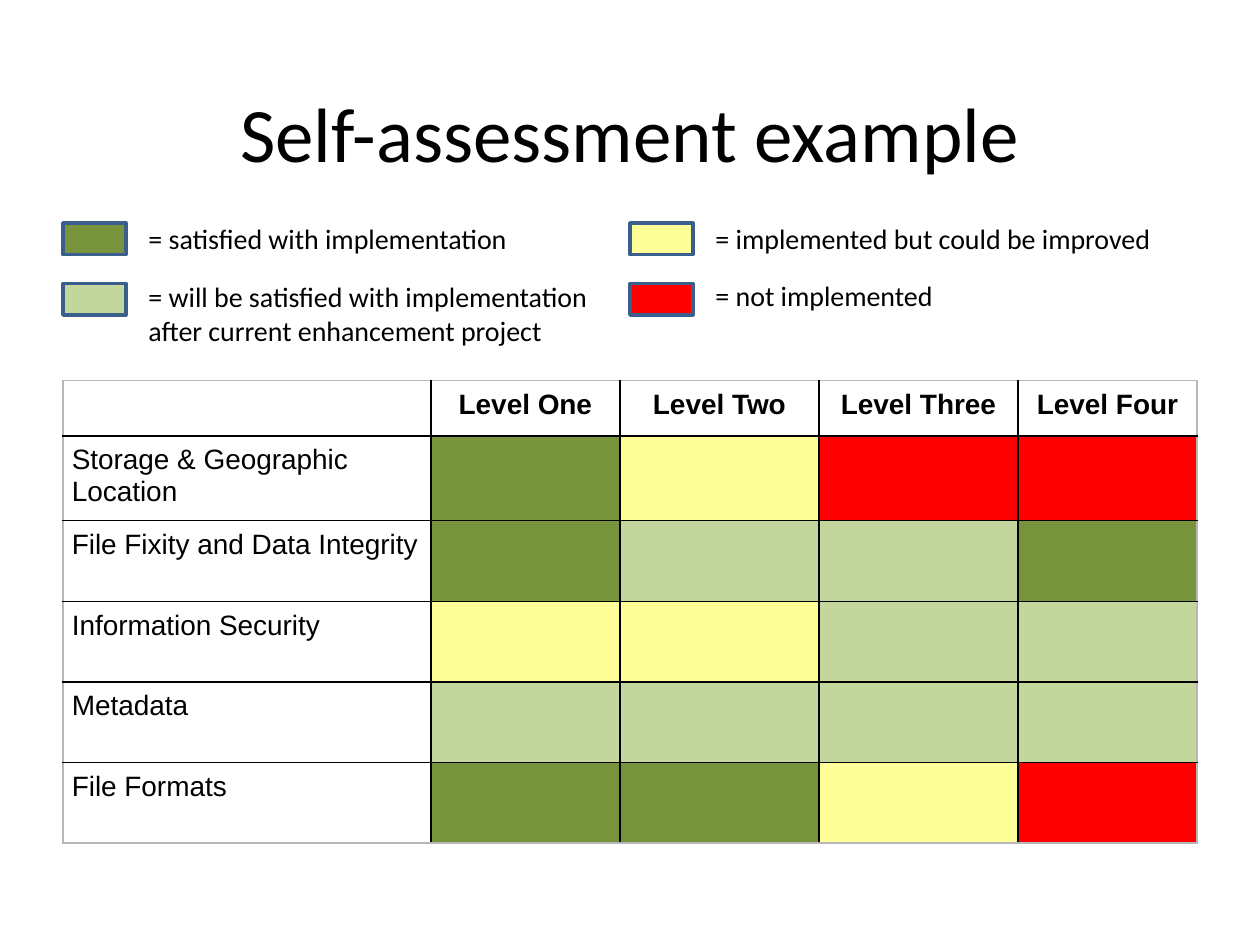
from lxml.etree import SubElement
from pptx import Presentation
from pptx.dml.color import RGBColor
from pptx.enum.shapes import MSO_SHAPE
from pptx.enum.text import MSO_ANCHOR, PP_ALIGN
from pptx.oxml.ns import qn
from pptx.util import Inches, Pt

BLACK = RGBColor(0x00, 0x00, 0x00)
GRAY = RGBColor(0xB7, 0xB7, 0xB7)
OUTLINE = RGBColor(0x3A, 0x5F, 0x8C)
SATISFIED = RGBColor(0x77, 0x93, 0x3C)
PLANNED = RGBColor(0xC3, 0xD6, 0x9B)
PARTIAL = RGBColor(0xFF, 0xFF, 0x99)
MISSING = RGBColor(0xFF, 0x00, 0x00)

LEVELS = ["Level One", "Level Two", "Level Three", "Level Four"]
ASSESSMENT = [
    ("Storage & Geographic Location", [SATISFIED, PARTIAL, MISSING, MISSING]),
    ("File Fixity and Data Integrity", [SATISFIED, PLANNED, PLANNED, SATISFIED]),
    ("Information Security", [PARTIAL, PARTIAL, PLANNED, PLANNED]),
    ("Metadata", [PLANNED, PLANNED, PLANNED, PLANNED]),
    ("File Formats", [SATISFIED, SATISFIED, PARTIAL, MISSING]),
]
COLUMN_WIDTHS = [2.92, 1.5, 1.58, 1.58, 1.42]
ROW_HEIGHTS = [0.41] + [0.64] * len(ASSESSMENT)

# left, swatch top, text top, text height, color, lines
LEGEND = [
    (0.5, 1.77, 1.71, 0.37, SATISFIED, ["= satisfied with implementation"]),
    (0.5, 2.25, 2.17, 0.64, PLANNED,
     ["= will be satisfied with implementation", "after current enhancement project"]),
    (5, 1.77, 1.71, 0.37, PARTIAL, ["= implemented but could be improved"]),
    (5, 2.25, 2.16, 0.37, MISSING, ["= not implemented"]),
]


def write_text(text_frame, lines, size, font, align=PP_ALIGN.LEFT, bold=False):
    text_frame.word_wrap = True
    for index, line in enumerate(lines):
        paragraph = text_frame.add_paragraph() if index else text_frame.paragraphs[0]
        paragraph.text = line
        paragraph.alignment = align
        paragraph.font.size = Pt(size)
        paragraph.font.name = font
        paragraph.font.bold = bold
        paragraph.font.color.rgb = BLACK


def set_border(cell, side, color, width):
    line = SubElement(cell._tc.get_or_add_tcPr(), qn(f"a:ln{side}"), w=str(Pt(width)))
    SubElement(SubElement(line, qn("a:solidFill")), qn("a:srgbClr"), val=str(color))


presentation = Presentation()
presentation.slide_width = Inches(10)
presentation.slide_height = Inches(7.5)
slide = presentation.slides.add_slide(presentation.slide_layouts[6])

title = slide.shapes.add_textbox(Inches(0.5), Inches(0.42), Inches(9), Inches(1.25))
title.text_frame.vertical_anchor = MSO_ANCHOR.MIDDLE
write_text(title.text_frame, ["Self-assessment example"], 44, "Calibri", PP_ALIGN.CENTER)

table = slide.shapes.add_table(
    len(ROW_HEIGHTS), len(COLUMN_WIDTHS), Inches(0.5), Inches(3.02),
    Inches(sum(COLUMN_WIDTHS)), Inches(sum(ROW_HEIGHTS))).table
table.first_row = False
table.horz_banding = False
for column, width in zip(table.columns, COLUMN_WIDTHS):
    column.width = Inches(width)
for row, height in zip(table.rows, ROW_HEIGHTS):
    row.height = Inches(height)

last_row, last_column = len(ROW_HEIGHTS) - 1, len(COLUMN_WIDTHS) - 1
for row_index in range(last_row + 1):
    for column_index in range(last_column + 1):
        cell = table.cell(row_index, column_index)
        cell.margin_left = cell.margin_right = Inches(0.07)
        cell.margin_top = cell.margin_bottom = Inches(0.07)
        outer_sides = {"L": column_index == 0, "R": column_index == last_column,
                       "T": row_index == 0, "B": row_index == last_row}
        for side, is_outer in outer_sides.items():
            set_border(cell, side, GRAY if is_outer else BLACK, 1)
        if row_index and column_index:
            cell.fill.solid()
            cell.fill.fore_color.rgb = ASSESSMENT[row_index - 1][1][column_index - 1]
        else:
            cell.fill.background()

for column_index, level in enumerate(LEVELS, start=1):
    write_text(table.cell(0, column_index).text_frame, [level], 16, "Arial",
               PP_ALIGN.CENTER, bold=True)
for row_index, (area, _) in enumerate(ASSESSMENT, start=1):
    write_text(table.cell(row_index, 0).text_frame, [area], 16, "Arial")

for left, swatch_top, text_top, text_height, color, lines in LEGEND:
    swatch = slide.shapes.add_shape(
        MSO_SHAPE.RECTANGLE, Inches(left), Inches(swatch_top), Inches(0.5), Inches(0.25))
    swatch.shadow.inherit = False
    swatch.fill.solid()
    swatch.fill.fore_color.rgb = color
    swatch.line.color.rgb = OUTLINE
    swatch.line.width = Pt(2)
    label = slide.shapes.add_textbox(
        Inches(left + 0.58), Inches(text_top), Inches(3.75), Inches(text_height))
    write_text(label.text_frame, lines, 16, "Calibri")

presentation.save("out.pptx")
